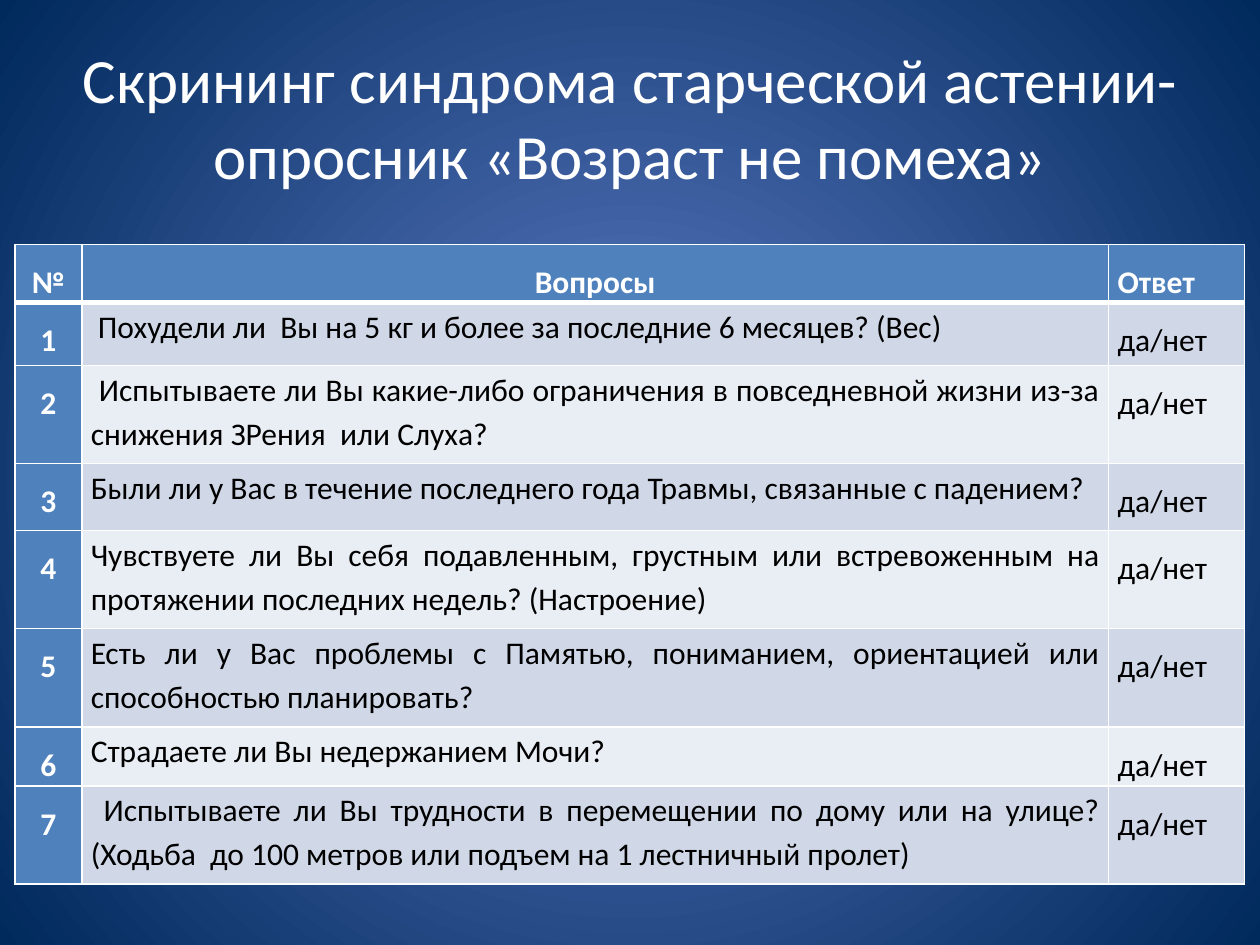
from lxml import etree
from pptx import Presentation
from pptx.dml.color import RGBColor
from pptx.enum.text import MSO_ANCHOR, MSO_AUTO_SIZE, PP_ALIGN
from pptx.oxml.ns import qn
from pptx.util import Cm, Pt

MID, TOP = MSO_ANCHOR.MIDDLE, MSO_ANCHOR.TOP
FIXED = MSO_AUTO_SIZE.NONE
CENTER, JUST = PP_ALIGN.CENTER, PP_ALIGN.JUSTIFY

THEME = {
    "font": "Calibri", "title": 36, "body": 18,
    "white": "FFFFFF", "black": "000000", "head": "4F81BD",
    "bands": ("D0D8E8", "E9EDF4"),
    "glow": "5E7CC5", "edge": "00295C",
}
WHITE, HEAD = THEME["white"], THEME["head"]


def style(para, size, color, bold, align, space):
    para.alignment, para.line_spacing = align, space
    form = {"name": THEME["font"], "size": Pt(size), "bold": bold}
    for key, value in form.items():
        setattr(para.font, key, value)
        setattr(para.runs[0].font, key, value)
    para.runs[0].font.color.rgb = RGBColor.from_string(color)


def border(cell, side, width):
    line = etree.SubElement(cell._tc.get_or_add_tcPr(), qn(f"a:ln{side}"),
                            w=str(Pt(width)))
    fill = etree.SubElement(line, qn("a:solidFill"))
    etree.SubElement(fill, qn("a:srgbClr"), val=WHITE)


deck = Presentation()
deck.slide_width, deck.slide_height = Cm(25.4), Cm(19.05)
slide = deck.slides.add_slide(deck.slide_layouts[5])

# Background: round glow from the centre
back = slide.background.fill
back.gradient()
for stop, color in zip(back.gradient_stops, (THEME["glow"], THEME["edge"])):
    stop.color.rgb = RGBColor.from_string(color)
for stop, place in zip(back.gradient_stops, (0, 1)):
    stop.position = place
grad = slide.element.find(".//" + qn("a:gradFill"))
grad.remove(grad.find(qn("a:lin")))
round_ = etree.SubElement(grad, qn("a:path"), path="circle")
etree.SubElement(round_, qn("a:fillToRect"),
                 **{side: "50000" for side in "ltrb"})

# Title
title = slide.shapes.title
place = {"left": 1.27, "top": 0.76, "width": 22.86, "height": 3.18}
for key, value in place.items():
    setattr(title, key, Cm(value))
frame = title.text_frame
frame.text = "Скрининг синдрома старческой астении- опросник «Возраст не помеха»"
form = {"word_wrap": True, "auto_size": FIXED, "vertical_anchor": MID}
for key, value in form.items():
    setattr(frame, key, value)
style(frame.paragraphs[0], THEME["title"], WHITE, False, CENTER, 1.0)

# Questions and row heights
asks = [
    (" Похудели ли  Вы на 5 кг и более за последние 6 месяцев? (Вес)", 1.27),
    (" Испытываете ли Вы какие-либо ограничения в повседневной жизни "
     "из-за снижения ЗРения  или Слуха?", 1.98),
    ("Были ли у Вас в течение последнего года Травмы, "
     "связанные с падением?", 1.35),
    ("Чувствуете ли Вы себя подавленным, грустным или встревоженным "
     "на протяжении последних недель? (Настроение)", 1.98),
    ("Есть ли у Вас проблемы с Памятью, пониманием, ориентацией "
     "или способностью планировать?", 1.98),
    ("Страдаете ли Вы недержанием Мочи?", 1.19),
    (" Испытываете ли Вы трудности в перемещении по дому или на улице? "
     "(Ходьба  до 100 метров или подъем на 1 лестничный пролет)", 1.98),
]
rows = [("№", "Вопросы", "Ответ")]
rows += [(str(n), ask, "да/нет") for n, (ask, _) in enumerate(asks, 1)]
tall = [1.12] + [high for _, high in asks]
wide = [1.35, 20.7, 2.74]

# Table grid
table = slide.shapes.add_table(len(rows), len(wide), Cm(0.3), Cm(4.93),
                               Cm(sum(wide)), Cm(sum(tall))).table
for col, width in zip(table.columns, wide):
    col.width = Cm(width)
for row, height in zip(table.rows, tall):
    row.height = Cm(height)

# Table cells
inset = {"margin_left": Cm(0.18), "margin_right": Cm(0.18),
         "margin_top": 0, "margin_bottom": 0, "vertical_anchor": TOP}
for r, texts in enumerate(rows):
    for c, text in enumerate(texts):
        cell = table.cell(r, c)
        cell.text = text
        for key, value in inset.items():
            setattr(cell, key, value)
        dark = r == 0 or c == 0
        style(cell.text_frame.paragraphs[0], THEME["body"],
              WHITE if dark else THEME["black"], dark,
              CENTER if c == 0 or (r == 0 and c == 1) else JUST,
              1.15 if r and c == 1 else 1.5)
        for side in "LRTB":
            thick = (r, side) in ((0, "B"), (1, "T"))
            border(cell, side, 3 if thick else 1)
        cell.fill.solid()
        cell.fill.fore_color.rgb = RGBColor.from_string(
            HEAD if dark else THEME["bands"][(r - 1) % 2])

deck.save("out.pptx")
